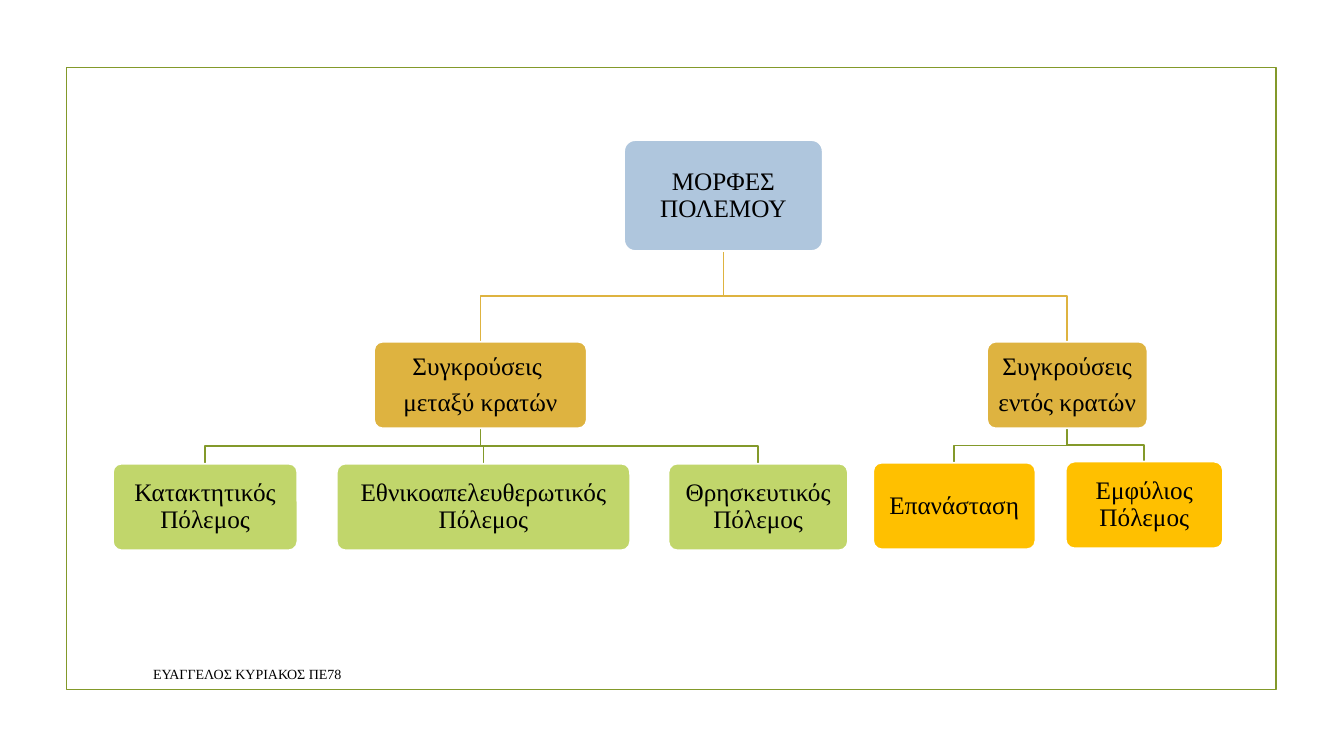
from pptx import Presentation
from pptx.dml.color import RGBColor
from pptx.enum.shapes import MSO_SHAPE
from pptx.enum.text import MSO_ANCHOR, PP_ALIGN
from pptx.util import Inches, Pt

RECTANGLE = MSO_SHAPE.RECTANGLE
ROUNDED = MSO_SHAPE.ROUNDED_RECTANGLE
MIDDLE = MSO_ANCHOR.MIDDLE
CENTER = PP_ALIGN.CENTER
FONT = "Times New Roman"
BLUE, GOLD, GREEN, LIME, AMBER = "AFC6DD", "DEB340", "83992A", "C1D66B", "FFC000"
BLACK, WHITE = "000000", "FFFFFF"

ROOT = ("ΜΟΡΦΕΣ ΠΟΛΕΜΟΥ", (6.19, 1.39, 1.97, 1.1), BLUE)
BRANCHES = [
    (("Συγκρούσεις \nμεταξύ κρατών", (3.71, 3.39, 2.11, 0.86), GOLD), [
        ("Κατακτητικός Πόλεμος", (1.12, 4.6, 1.83, 0.86), LIME),
        ("Εθνικοαπελευθερωτικός Πόλεμος", (3.34, 4.6, 2.91, 0.86), LIME),
        ("Θρησκευτικός Πόλεμος", (6.63, 4.6, 1.78, 0.86), LIME),
    ]),
    (("Συγκρούσεις\nεντός κρατών", (9.79, 3.39, 1.59, 0.86), GOLD), [
        ("Επανάσταση", (8.66, 4.59, 1.61, 0.86), AMBER),
        ("Εμφύλιος Πόλεμος", (10.57, 4.58, 1.56, 0.86), AMBER),
    ]),
]


def color(value):
    """Return the colour for a hex string."""
    return RGBColor.from_string(value)


def style_line(shape, value):
    """Outline a shape without shadow."""
    shape.shadow.inherit = False
    shape.line.color.rgb = color(value)
    shape.line.width = Pt(1.25)


def style_text(para, size):
    """Set the font of a paragraph's runs."""
    for span in para.runs:
        span.font.name = FONT
        span.font.size = Pt(size)
        span.font.color.rgb = color(BLACK)


def add_frame(page, box):
    """Draw the border of the page."""
    frame = page.shapes.add_shape(RECTANGLE, *map(Inches, box))
    frame.fill.background()
    style_line(frame, GREEN)


def add_node(page, node):
    """Draw one labelled box of the tree."""
    label, box, fill = node
    shape = page.shapes.add_shape(ROUNDED, *map(Inches, box))
    shape.adjustments[0] = 0.1
    shape.fill.solid()
    shape.fill.fore_color.rgb = color(fill)
    style_line(shape, WHITE)
    frame = shape.text_frame
    frame.word_wrap = True
    frame.vertical_anchor = MIDDLE
    frame.margin_left = frame.margin_right = Inches(0.05)
    frame.margin_top = frame.margin_bottom = Inches(0.05)
    frame.text = label
    for para in frame.paragraphs:
        para.alignment = CENTER
        para.line_spacing = 0.9
        para.space_after = Pt(6.3)
        style_text(para, 18)


def add_link(page, parent, child, line):
    """Join a parent box to a child box with a stepped line."""
    left, top, width, height = parent[1]
    start_x, start_y = left + width / 2, top + height
    end_x, end_y = child[1][0] + child[1][2] / 2, child[1][1]
    middle_y = (start_y + end_y) / 2
    corners = [(start_x, middle_y), (end_x, middle_y), (end_x, end_y)]
    builder = page.shapes.build_freeform(Inches(start_x), Inches(start_y))
    builder.add_line_segments(
        [(Inches(x), Inches(y)) for x, y in corners], close=False)
    link = builder.convert_to_shape()
    link.fill.background()
    style_line(link, line)


def add_tree(page, root, branches):
    """Draw the whole hierarchy."""
    for branch, leaves in branches:
        add_link(page, root, branch, GOLD)
        for leaf in leaves:
            add_link(page, branch, leaf, GREEN)
            add_node(page, leaf)
        add_node(page, branch)
    add_node(page, root)


def add_footer(page, box, text):
    """Write the footer line."""
    frame = page.shapes.add_textbox(*map(Inches, box)).text_frame
    frame.word_wrap = True
    frame.vertical_anchor = MIDDLE
    frame.text = text
    style_text(frame.paragraphs[0], 10)


def main():
    """Build and save the deck."""
    deck = Presentation()
    deck.slide_width, deck.slide_height = Inches(13.33), Inches(7.5)
    page = deck.slides.add_slide(deck.slide_layouts[6])
    add_frame(page, (0.66, 0.67, 12, 6.17))
    add_tree(page, ROOT, BRANCHES)
    add_footer(page, (1.42, 6.53, 7.99, 0.31), "ΕΥΑΓΓΕΛΟΣ ΚΥΡΙΑΚΟΣ ΠΕ78")
    deck.save("out.pptx")


if __name__ == "__main__":
    main()
